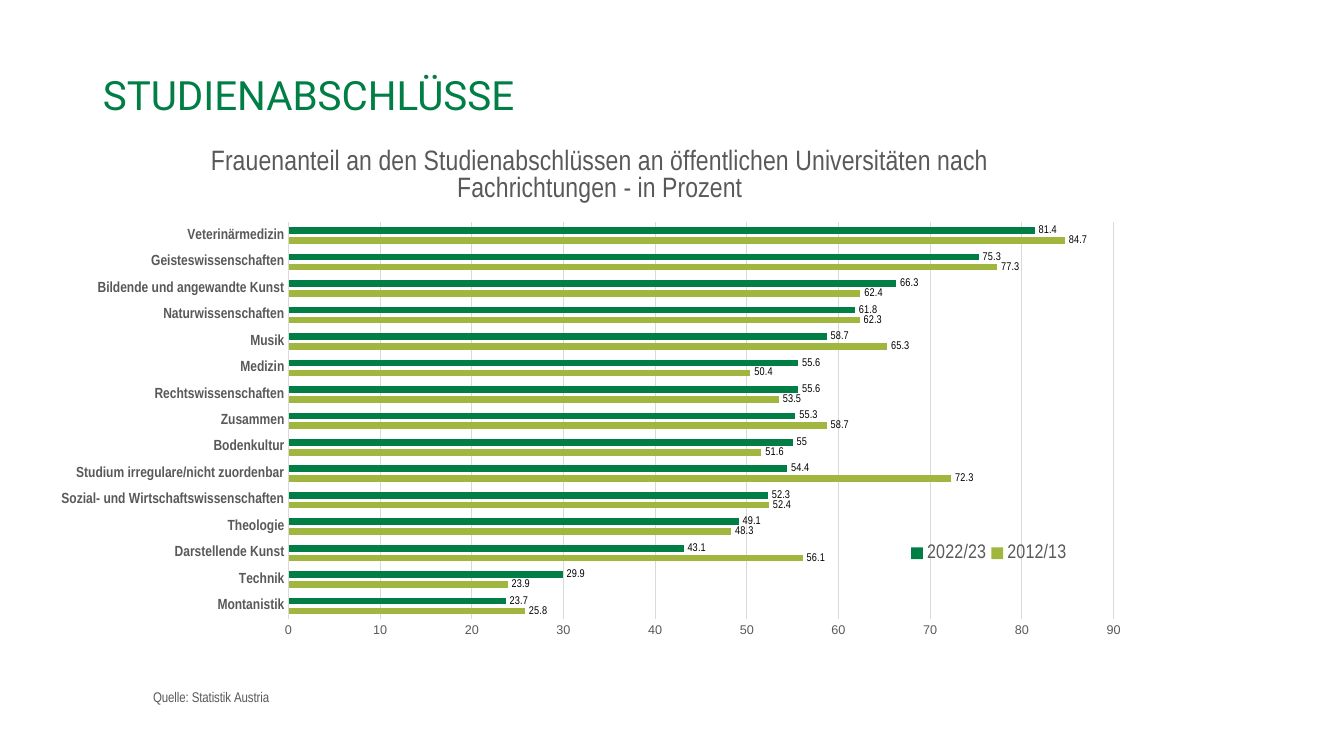
import pptx
import pptx.chart.data
import pptx.dml.color
import pptx.enum.chart
import pptx.enum.text
import pptx.oxml
import pptx.oxml.ns
import pptx.util

GREEN, OLIVE, GREY, LIGHT, BLACK = "007E46", "A0B63E", "595959", "D9D9D9", "000000"
NARROW = "Arial Narrow"
SHARES = [
    ("Montanistik", 25.8, 23.7),
    ("Technik", 23.9, 29.9),
    ("Darstellende Kunst", 56.1, 43.1),
    ("Theologie", 48.3, 49.1),
    ("Sozial- und Wirtschaftswissenschaften", 52.4, 52.3),
    ("Studium irregulare/nicht zuordenbar", 72.3, 54.4),
    ("Bodenkultur", 51.6, 55),
    ("Zusammen", 58.7, 55.3),
    ("Rechtswissenschaften", 53.5, 55.6),
    ("Medizin", 50.4, 55.6),
    ("Musik", 65.3, 58.7),
    ("Naturwissenschaften", 62.3, 61.8),
    ("Bildende und angewandte Kunst", 62.4, 66.3),
    ("Geisteswissenschaften", 77.3, 75.3),
    ("Veterinärmedizin", 84.7, 81.4),
]


def rgb(value):
    return pptx.dml.color.RGBColor.from_string(value)


def assign(target, **values):
    for name, value in values.items():
        setattr(target, name, value)


def style_font(font, size, color, name=NARROW, bold=False):
    assign(font, size=pptx.util.Pt(size), name=name, bold=bold)
    font.color.rgb = rgb(color)


def style_line(line, color):
    line.color.rgb = rgb(color)
    line.width = pptx.util.Pt(0.75)


def place(parent, after, **fractions):
    for old in parent.findall(pptx.oxml.ns.qn("c:layout")):
        parent.remove(old)
    inner = '<c:layoutTarget val="inner"/>' if after is None else ""
    modes = "".join(f'<c:{axis}Mode val="edge"/>' for axis in "xy")
    sizes = "".join(f'<c:{key} val="{value}"/>' for key, value in fractions.items())
    layout = pptx.oxml.parse_xml(
        f"<c:layout {pptx.oxml.ns.nsdecls('c')}><c:manualLayout>"
        f"{inner}{modes}{sizes}</c:manualLayout></c:layout>")
    if after is None:
        parent.insert(0, layout)
    else:
        parent.find(pptx.oxml.ns.qn(after)).addnext(layout)


def write_caption(caption, text, size, x, y):
    frame = caption.text_frame
    frame.text = text
    style_font(frame.paragraphs[0].runs[0].font, size, GREY)
    body = frame._txBody.find(pptx.oxml.ns.qn("a:bodyPr"))
    body.set("rot", "0")
    body.set("vert", "horz")
    place(caption._element, "c:tx", x=x, y=y)


def add_heading(slide, text):
    heading = slide.shapes.title
    assign(heading, left=pptx.util.Inches(0.92), top=pptx.util.Inches(0.72),
           width=pptx.util.Inches(9.99), height=pptx.util.Inches(0.49))
    frame = heading.text_frame
    frame.text = text
    assign(frame, vertical_anchor=pptx.enum.text.MSO_ANCHOR.MIDDLE, word_wrap=True)
    paragraph = frame.paragraphs[0]
    assign(paragraph, alignment=pptx.enum.text.PP_ALIGN.LEFT, line_spacing=0.9)
    style_font(paragraph.runs[0].font, 28.8, GREEN, "Roboto")


def style_axes(chart):
    no_tick = pptx.enum.chart.XL_TICK_MARK.NONE
    subjects, percent = chart.category_axis, chart.value_axis
    for axis in (subjects, percent):
        assign(axis, major_tick_mark=no_tick, minor_tick_mark=no_tick)
    subjects.has_major_gridlines = False
    style_font(subjects.tick_labels.font, 10.5, GREY, bold=True)
    style_line(subjects.format.line, LIGHT)
    assign(percent, minimum_scale=0, maximum_scale=90, major_unit=10,
           has_major_gridlines=True, has_title=True)
    style_font(percent.tick_labels.font, 9, GREY, "Arial")
    style_line(percent.major_gridlines.format.line, LIGHT)
    percent.format.line.fill.background()
    write_caption(percent.axis_title, "Quelle: Statistik Austria", 10, 0.1, 0.94)


def style_bars(plot):
    assign(plot, gap_width=150, overlap=-50, vary_by_categories=False)
    for series, color in zip(plot.series, (OLIVE, GREEN)):
        series.format.fill.solid()
        series.format.fill.fore_color.rgb = rgb(color)
        labels = series.data_labels
        assign(labels, show_value=True,
               position=pptx.enum.chart.XL_LABEL_POSITION.OUTSIDE_END)
        style_font(labels.font, 8, BLACK)


def add_share_chart(slide):
    subjects, earlier, later = zip(*SHARES)
    data = pptx.chart.data.CategoryChartData()
    data.categories = subjects
    data.add_series("2012/13", earlier)
    data.add_series("2022/23", later)
    bounds = [pptx.util.Inches(v) for v in (0.4, 1.22, 10.94, 5.97)]
    chart = slide.shapes.add_chart(
        pptx.enum.chart.XL_CHART_TYPE.BAR_CLUSTERED, *bounds, data).chart
    style_font(chart.font, 10, BLACK, "Arial")
    assign(chart, has_title=True, has_legend=True)
    write_caption(
        chart.chart_title,
        "Frauenanteil an den Studienabschlüssen an öffentlichen Universitäten "
        "nach Fachrichtungen - in Prozent", 20, 0.15, 0.03)
    style_axes(chart)
    style_bars(chart.plots[0])
    place(chart._chartSpace.chart.plotArea, None, x=0.225, y=0.165, w=0.748, h=0.66)
    legend = chart.legend
    assign(legend, position=pptx.enum.chart.XL_LEGEND_POSITION.BOTTOM,
           include_in_layout=False)
    style_font(legend.font, 14, GREY)
    place(legend._element, "c:legendPos", x=0.785, y=0.69, w=0.15, h=0.05)


def main():
    deck = pptx.Presentation()
    assign(deck, slide_width=pptx.util.Inches(13.33),
           slide_height=pptx.util.Inches(7.5))
    slide = deck.slides.add_slide(deck.slide_layouts[5])
    add_heading(slide, "STUDIENABSCHLÜSSE")
    add_share_chart(slide)
    deck.save("out.pptx")


if __name__ == "__main__":
    main()
